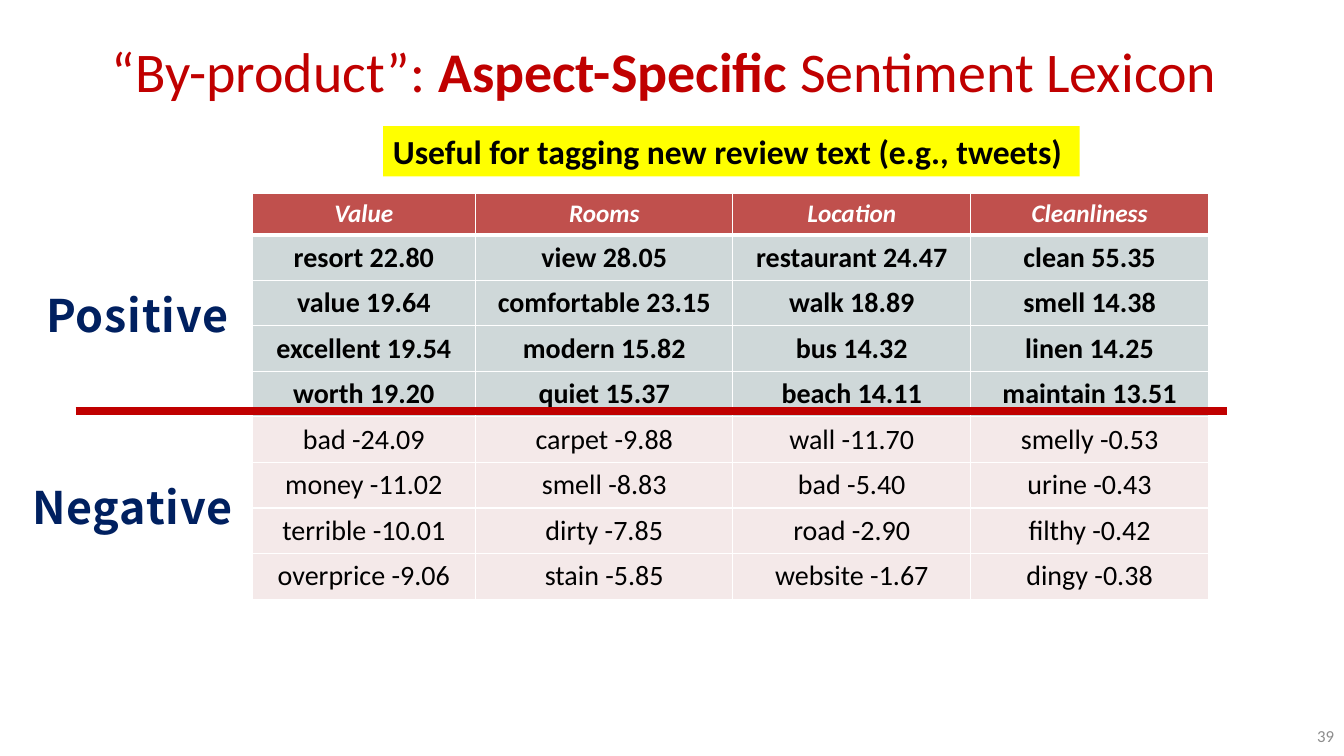
from lxml import etree
from pptx import Presentation, util as u
from pptx.dml.color import RGBColor
from pptx.enum import shapes, text
from pptx.oxml.ns import qn

WIDTH, HEIGHT = u.Inches(13.33), u.Inches(7.5)
RED, NAVY, WHITE, BLACK = "C00000", "002060", "FFFFFF", "000000"
HEADER_FILL, POSITIVE_FILL, NEGATIVE_FILL = "C0504D", "CFD8D9", "F4E9E9"
ASPECT_WIDTHS = (16.65, 19.13, 17.7, 17.7)
HEADER_HEIGHT, WORD_HEIGHT = 5.44, 6.03
ASPECTS = ("Value", "Rooms", "Location", "Cleanliness")
POSITIVE = (
    ("resort 22.80", "view 28.05", "restaurant 24.47", "clean 55.35"),
    ("value 19.64", "comfortable 23.15", "walk 18.89", "smell 14.38"),
    ("excellent 19.54", "modern 15.82", "bus 14.32", "linen 14.25"),
    ("worth 19.20", "quiet 15.37", "beach 14.11", "maintain 13.51"),
)
NEGATIVE = (
    ("bad -24.09", "carpet -9.88", "wall -11.70", "smelly -0.53"),
    ("money -11.02", "smell -8.83", "bad -5.40", "urine -0.43"),
    ("terrible -10.01", "dirty -7.85", "road -2.90", "filthy -0.42"),
    ("overprice -9.06", "stain -5.85", "website -1.67", "dingy -0.38"),
)


def color(value):
    """Turn a hex string into a colour."""
    return RGBColor.from_string(value)


def across(share):
    """Turn a percentage of the slide width into a length."""
    return int(WIDTH * share / 100)


def down(share):
    """Turn a percentage of the slide height into a length."""
    return int(HEIGHT * share / 100)


def area(left, top, width, height):
    """Turn percentages of the slide into a position and a size."""
    return across(left), down(top), across(width), down(height)


def write(paragraph, words, size=20, ink=BLACK, bold=False, italic=False,
          font="Calibri", align=text.PP_ALIGN.CENTER, tracking=0):
    """Add formatted words to a paragraph."""
    paragraph.alignment = align
    run = paragraph.add_run()
    run.text = words
    run.font.size, run.font.name = u.Pt(size), font
    run.font.bold, run.font.italic = bold, italic
    run.font.color.rgb = color(ink)
    if tracking:
        run.font._element.set("spc", str(int(tracking * 100)))


def add_title(slide):
    """Fill the title placeholder, with its words in the upper part."""
    title = slide.shapes.title
    title.left, title.top, title.width, title.height = area(1.28, 6.67, 96.25, 14.4)
    frame = title.text_frame
    frame.word_wrap = True
    frame.auto_size = text.MSO_AUTO_SIZE.NONE
    frame.vertical_anchor = text.MSO_ANCHOR.MIDDLE
    frame.margin_top, frame.margin_bottom = 0, down(8)
    heading = frame.paragraphs[0]
    heading.line_spacing = 0.9
    write(heading, "“By-product”: ", size=40, ink=RED)
    write(heading, "Aspect-Specific ", size=40, ink=RED, bold=True)
    write(heading, "Sentiment Lexicon", size=40, ink=RED)


def add_label(slide, place, words, wrap=True, margin=None, spacing=None, **style):
    """Add a text box with one line of words."""
    frame = slide.shapes.add_textbox(*area(*place)).text_frame
    frame.word_wrap = wrap
    frame.vertical_anchor = text.MSO_ANCHOR.MIDDLE
    if margin is not None:
        frame.margin_left = frame.margin_right = u.Inches(margin)
        frame.margin_top = frame.margin_bottom = u.Inches(margin)
    if spacing:
        frame.paragraphs[0].line_spacing = spacing
    write(frame.paragraphs[0], words, **style)


def add_banner(slide, place, words, fill):
    """Add a filled rectangle with a bold remark."""
    banner = slide.shapes.add_shape(shapes.MSO_SHAPE.RECTANGLE, *area(*place))
    banner.shadow.inherit = False
    banner.fill.solid()
    banner.fill.fore_color.rgb = color(fill)
    banner.line.fill.background()
    frame = banner.text_frame
    frame.word_wrap = True
    frame.vertical_anchor = text.MSO_ANCHOR.TOP
    write(frame.paragraphs[0], words, size=24, bold=True, align=text.PP_ALIGN.LEFT)


def add_borders(cell, bottom):
    """Draw white borders round a cell, with a given bottom width."""
    properties = cell._tc.get_or_add_tcPr()
    for side, points in (("L", 1), ("R", 1), ("T", 1), ("B", bottom)):
        border = etree.SubElement(properties, qn("a:ln" + side), w=str(u.Pt(points)))
        fill = etree.SubElement(border, qn("a:solidFill"))
        etree.SubElement(fill, qn("a:srgbClr"), val=WHITE)


def add_lexicon(slide, left, top):
    """Add the table of weighted words for each aspect."""
    header = (ASPECTS, HEADER_FILL, 3,
              dict(size=18, ink=WHITE, bold=True, italic=True))
    rows = [header]
    rows += [(words, POSITIVE_FILL, 1, dict(bold=True)) for words in POSITIVE]
    rows += [(words, NEGATIVE_FILL, 1, dict()) for words in NEGATIVE]
    heights = [HEADER_HEIGHT] + [WORD_HEIGHT] * (len(rows) - 1)
    place = area(left, top, sum(ASPECT_WIDTHS), sum(heights))
    lexicon = slide.shapes.add_table(len(rows), len(ASPECTS), *place).table
    for column, width in zip(lexicon.columns, ASPECT_WIDTHS):
        column.width = across(width)
    for row, height, (words, fill, bottom, style) in zip(lexicon.rows, heights, rows):
        row.height = down(height)
        for cell, word in zip(row.cells, words):
            add_borders(cell, bottom)
            cell.fill.solid()
            cell.fill.fore_color.rgb = color(fill)
            cell.vertical_anchor = text.MSO_ANCHOR.MIDDLE
            write(cell.text_frame.paragraphs[0], word, **style)


def add_divider(slide, left, right, top):
    """Add the thick line between positive and negative words."""
    divider = slide.shapes.add_connector(
        shapes.MSO_CONNECTOR.STRAIGHT, across(left), down(top), across(right), down(top))
    divider.line.color.rgb = color(RED)
    divider.line.width = u.Pt(6)
    etree.SubElement(divider._element.spPr, qn("a:effectLst"))


def main():
    """Build the slide and save it."""
    deck = Presentation()
    deck.slide_width, deck.slide_height = WIDTH, HEIGHT
    slide = deck.slides.add_slide(deck.slide_layouts[5])
    add_title(slide)
    add_lexicon(slide, 18.75, 25.6)
    add_label(slide, (76.67, 94.67, 23.33, 5.33), "39", size=12, ink="8C8C8C",
              align=text.PP_ALIGN.RIGHT)
    for words, place in (("Positive", (3, 36.53, 14.55, 9.33)),
                         ("Negative", (1.95, 62, 16.58, 9.33))):
        add_label(slide, place, words, wrap=False, margin=0.06, spacing=1.1,
                  size=32, ink=NAVY, bold=True, font="Noto Sans CJK SC",
                  align=text.PP_ALIGN.LEFT, tracking=0.6)
    add_divider(slide, 5.63, 91.3, 54.4)
    add_banner(slide, (28.5, 16.67, 51.84, 6.67),
               "Useful for tagging new review text (e.g., tweets)", "FFFF00")
    deck.save("out.pptx")


if __name__ == "__main__":
    main()
